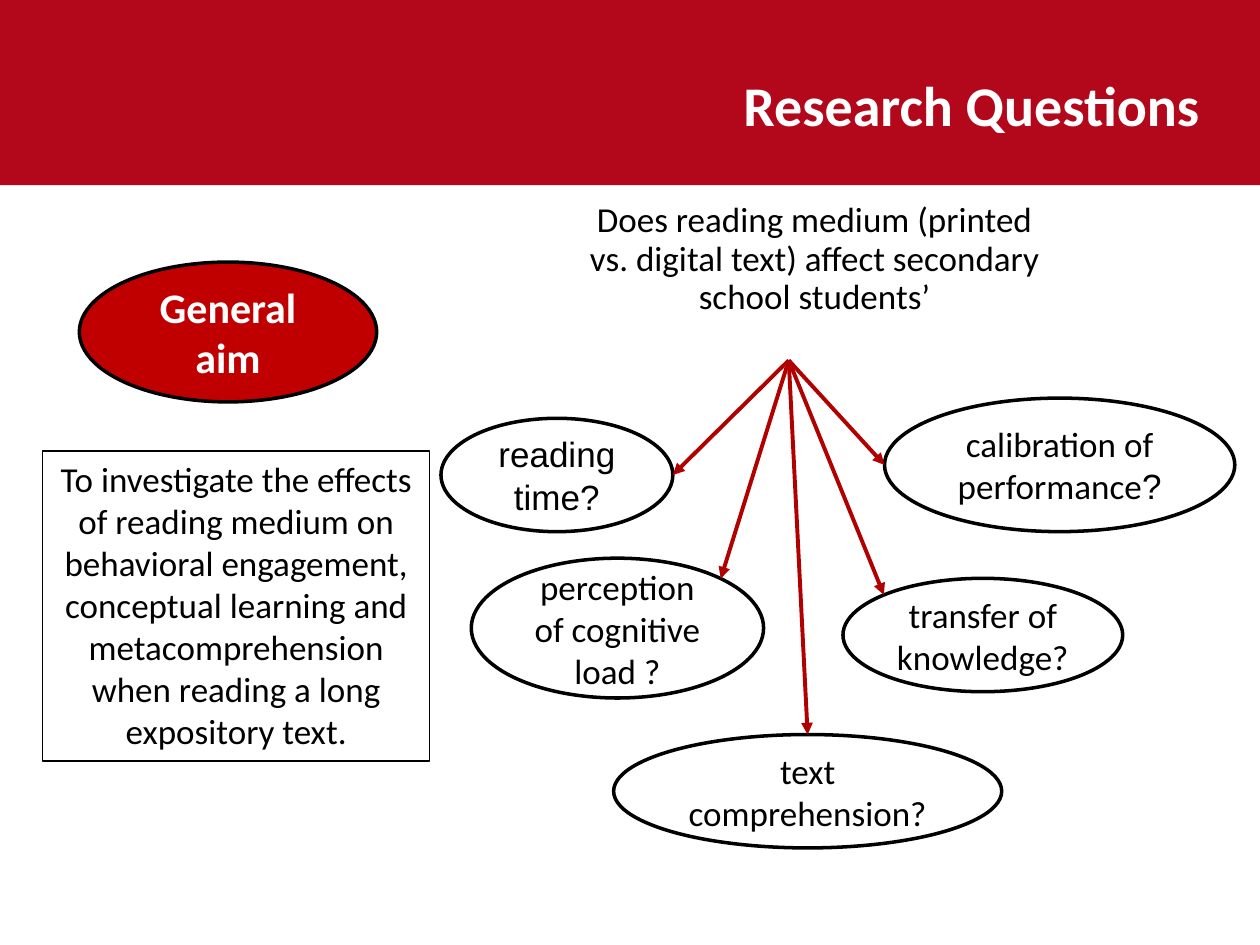
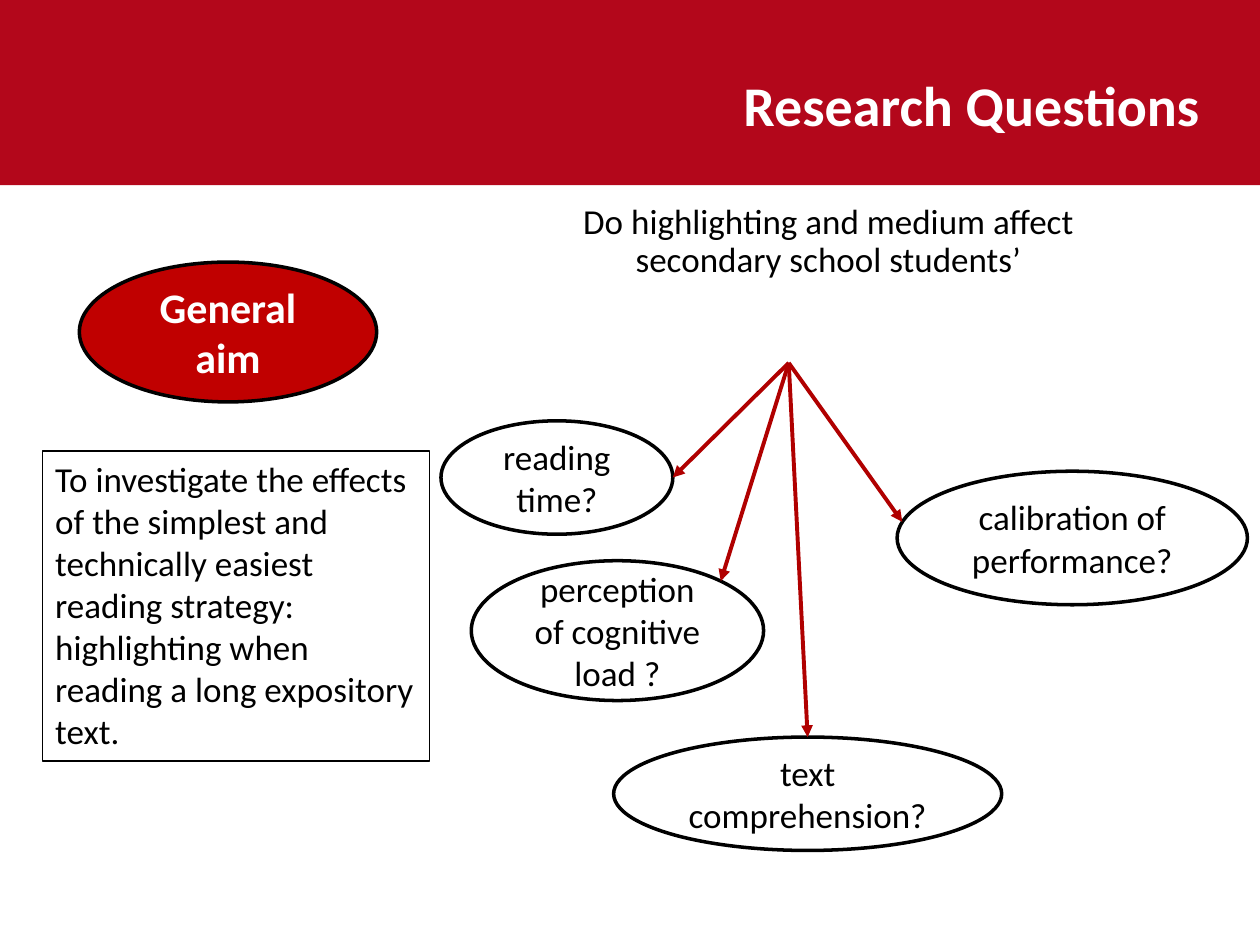
"""Build two slides on research questions, each with an aim and a fan of outcomes."""
from math import cos, radians, sin

from lxml import etree
from pptx import Presentation
from pptx.dml.color import RGBColor
from pptx.enum.shapes import MSO_CONNECTOR, MSO_SHAPE
from pptx.enum.text import MSO_ANCHOR, MSO_AUTO_SIZE, PP_ALIGN
from pptx.oxml.ns import qn
from pptx.util import Inches, Pt

STRAIGHT = MSO_CONNECTOR.STRAIGHT
RECT, OVAL = MSO_SHAPE.RECTANGLE, MSO_SHAPE.OVAL
TOP, MIDDLE = MSO_ANCHOR.TOP, MSO_ANCHOR.MIDDLE
LEFT, CENTER, JUSTIFY = PP_ALIGN.LEFT, PP_ALIGN.CENTER, PP_ALIGN.JUSTIFY
NO_FIT = MSO_AUTO_SIZE.NONE

BAND, AIM_FILL, ARROW = "B3071B", "C00000", "B00000"
BLACK, WHITE = "000000", "FFFFFF"
FONT, ALT_FONT = "Calibri", "Arial"
TITLE = "Research Questions"
TITLE_BOX = (5.8, 0.51, 4.17, 0.64)
BAND_BOX = (0, -0.03, 10, 1.5)
AIM_BOX = (0.63, 2.08, 2.36, 1.11)
AIM_TEXT_BOX = (0.34, 3.58, 3.07, 2.46)
HUB = (6.26, 2.86)

# Outcome: runs of (text, font), box, angle in degrees where the arrow lands
READING_BOX = (3.5, 3.32, 1.84, 0.9)
PERCEPTION = ([("perception of cognitive load ?", FONT)], (3.74, 4.43, 2.32, 1.11), 45)
COMPREHENSION = ([("text comprehension?", FONT)], (4.87, 5.83, 3.08, 0.9), 90)

SLIDES = [
    {
        "aim": "To investigate the effects of reading medium on behavioral engagement, "
               "conceptual learning and metacomprehension when reading a long expository text.",
        "aim_align": CENTER,
        "question": "Does reading medium (printed vs. digital text) affect secondary "
                    "school students’",
        "question_box": (4.52, 1.55, 3.89, 1.03),
        "shift": 0,
        "outcomes": [
            ([("reading time?", ALT_FONT)], READING_BOX, 0),
            ([("calibration of performance", FONT), ("?", ALT_FONT)],
             (7.02, 3.16, 2.78, 1.06), 180),
            PERCEPTION,
            ([("transfer of knowledge?", FONT)], (6.69, 4.59, 2.22, 0.9), 135),
            COMPREHENSION,
        ],
    },
    {
        "aim": "To investigate the effects of the simplest and technically easiest reading "
               "strategy: highlighting when reading a long expository text.",
        "aim_align": LEFT,
        "question": "Do highlighting and medium affect secondary school students’",
        "question_box": (4.52, 1.56, 4.11, 0.72),
        "shift": 0.02,
        "outcomes": [
            ([("reading time?", FONT)], READING_BOX, 0),
            ([("calibration of performance?", FONT)], (7.12, 3.72, 2.78, 1.06), 166),
            PERCEPTION,
            COMPREHENSION,
        ],
    },
]


def rgb(value):
    return RGBColor.from_string(value)


def inches(values):
    return [Inches(v) for v in values]


def write(sp, runs, size=20, color=BLACK, bold=False, align=CENTER, anchor=MIDDLE):
    tf = sp.text_frame
    tf.word_wrap = True
    tf.auto_size = NO_FIT
    tf.vertical_anchor = anchor
    p = tf.paragraphs[0]
    p.alignment = align
    p.font.size, p.font.bold, p.font.name = Pt(size), bold, runs[0][1]
    p.font.color.rgb = rgb(color)
    for text, font in runs:
        r = p.add_run()
        r.text = text
        if font != runs[0][1]:
            r.font.name = font
    return p


def add_shape(slide, kind, box, fill=None, line=None, width=2):
    sp = slide.shapes.add_shape(kind, *inches(box))
    sp.shadow.inherit = False
    if fill:
        sp.fill.solid()
        sp.fill.fore_color.rgb = rgb(fill)
    else:
        sp.fill.background()
    if line:
        sp.line.color.rgb = rgb(line)
        sp.line.width = Pt(width)
    else:
        sp.line.fill.background()
    return sp


def add_arrow(slide, start, end):
    line = slide.shapes.add_connector(STRAIGHT, *inches(start + end))
    line.line.color.rgb = rgb(ARROW)
    line.line.width = Pt(2.25)
    etree.SubElement(line.line._get_or_add_ln(), qn("a:tailEnd"), type="triangle")
    etree.SubElement(line.element.spPr, qn("a:effectLst"))
    return line


def add_outcome(slide, runs, box, angle, shift):
    x, y, w, h = box
    y += shift
    sp = add_shape(slide, OVAL, (x, y, w, h), line=BLACK)
    write(sp, runs)
    a = radians(angle)
    end = (x + w / 2 * (1 + cos(a)), y + h / 2 * (1 - sin(a)))
    arrow = add_arrow(slide, (HUB[0], HUB[1] + shift), end)
    if angle == 90:
        arrow.end_connect(sp, 0)


def add_slide(prs, layout, content):
    slide = prs.slides.add_slide(layout)
    title = slide.shapes.title
    title.left, title.top, title.width, title.height = inches(TITLE_BOX)
    write(title, [(TITLE, FONT)], 32, WHITE, True, JUSTIFY)

    sp = add_shape(slide, RECT, AIM_TEXT_BOX, line=BLACK, width=0.75)
    write(sp, [(content["aim"], FONT)], align=content["aim_align"], anchor=TOP)
    sp = add_shape(slide, OVAL, AIM_BOX, AIM_FILL, BLACK)
    write(sp, [("General aim", FONT)], 24, WHITE, True)

    for outcome in content["outcomes"]:
        add_outcome(slide, *outcome, content["shift"])
    question = slide.shapes.add_textbox(*inches(content["question_box"]))
    p = write(question, [(content["question"], FONT)], anchor=TOP)
    p.line_spacing = Pt(22)
    return slide


def main():
    prs = Presentation()
    prs.slide_width, prs.slide_height = Inches(10), Inches(7.5)
    layout = prs.slide_layouts[5]
    slides = [add_slide(prs, layout, content) for content in SLIDES]
    band = add_shape(slides[0], RECT, BAND_BOX, BAND)
    layout.shapes.element.insert(2, band.element)
    prs.save("out.pptx")


if __name__ == "__main__":
    main()
